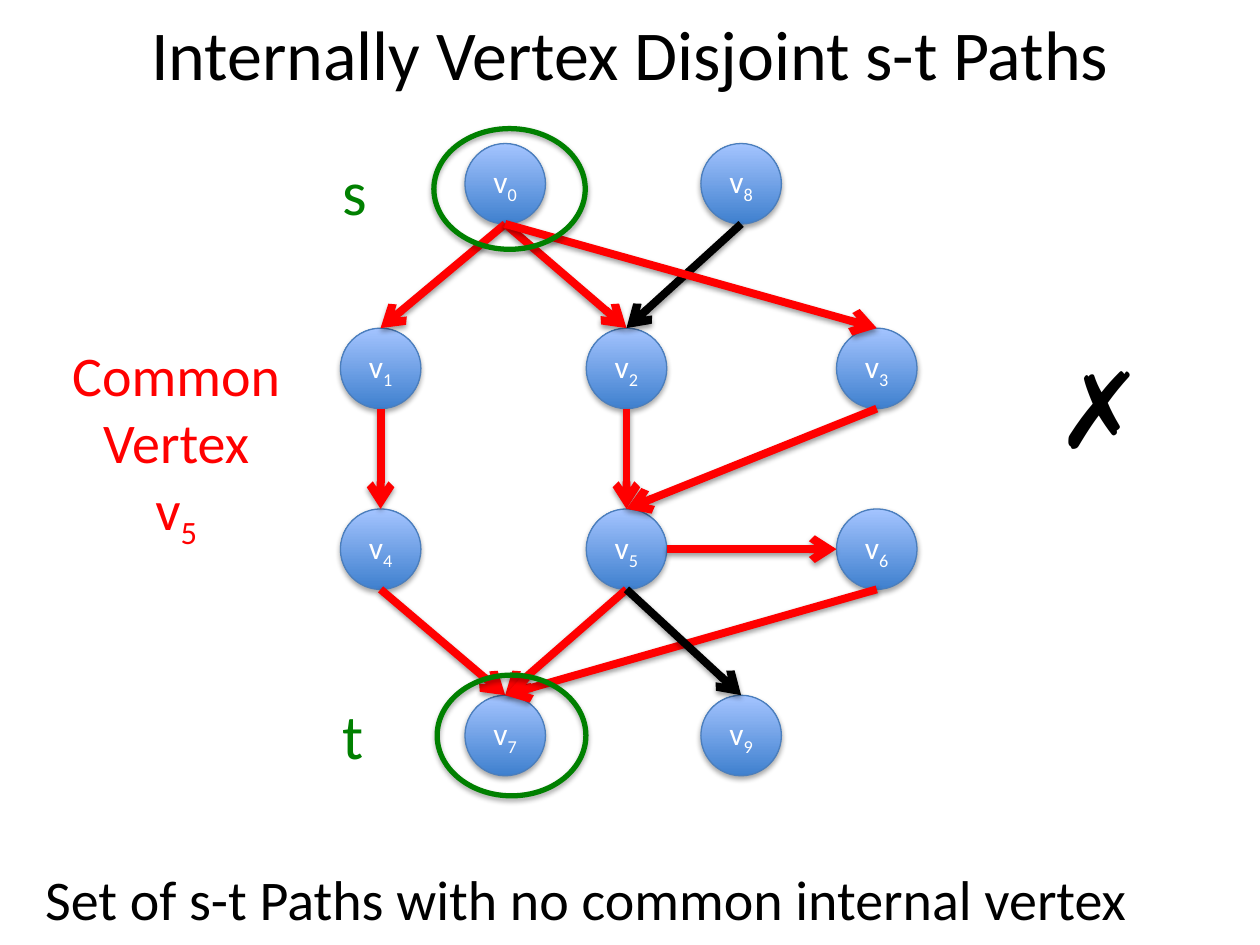
from lxml.etree import SubElement
from pptx import Presentation
from pptx.dml.color import RGBColor
from pptx.enum.shapes import MSO_CONNECTOR, MSO_SHAPE
from pptx.enum.text import MSO_ANCHOR, MSO_AUTO_SIZE, PP_ALIGN
from pptx.oxml import parse_xml
from pptx.oxml.ns import nsdecls, qn
from pptx.util import Pt

RED, BLACK, GREEN, WHITE = "FF0000", "000000", "008000", "FFFFFF"
DIAMETER = 46
ROWS = (105, 210.5, 313.8, 420.3)
LEFT, MIDDLE, RIGHT = 217.5, 358, 501
INNER_LEFT, INNER_RIGHT = 288.7, 423.5
NODES = {
    "8": (INNER_RIGHT, ROWS[0]), "0": (INNER_LEFT, ROWS[0]),
    "1": (LEFT, ROWS[1]), "2": (MIDDLE, ROWS[1]), "3": (RIGHT, ROWS[1]),
    "4": (LEFT, ROWS[2]), "5": (MIDDLE, ROWS[2]), "6": (RIGHT, ROWS[2]),
    "9": (INNER_RIGHT, ROWS[3]), "7": (INNER_LEFT, ROWS[3]),
}
EDGES = [
    ("0", "1", RED), ("1", "4", RED), ("4", "7", RED), ("0", "2", RED),
    ("2", "5", RED), ("5", "7", RED), ("5", "6", RED), ("8", "2", BLACK),
    ("0", "3", RED), ("6", "7", RED), ("3", "5", RED), ("5", "9", BLACK),
]


def color(value):
    return RGBColor.from_string(value)


def write(frame, text, size=32, fill=BLACK, font="Calibri", align=PP_ALIGN.LEFT):
    for index, line in enumerate(text.split("\n")):
        para = frame.paragraphs[0] if index == 0 else frame.add_paragraph()
        para.alignment = align
        base, _, subscript = line.partition("_")
        for part, lowered in ((base, False), (subscript, True)):
            if not part:
                continue
            span = para.add_run()
            span.text = part
            span.font.size = Pt(size)
            span.font.name = font
            span.font.color.rgb = color(fill)
            if lowered:
                span.font._element.set("baseline", "-25000")


class GraphSlide:
    def __init__(self, slide):
        self.slide = slide
        self.shapes = slide.shapes

    def shadow(self, shape, distance, opacity):
        effects = parse_xml(
            f'<a:effectLst {nsdecls("a")}><a:outerShdw blurRad="{Pt(3.1)}" '
            f'dist="{Pt(distance)}" dir="5400000" rotWithShape="0"><a:srgbClr val="{BLACK}">'
            f'<a:alpha val="{opacity * 1000}"/></a:srgbClr></a:outerShdw></a:effectLst>'
        )
        shape._element.spPr.append(effects)

    def title(self, text, left, top, width, height):
        box = self.shapes.title
        box.left, box.top, box.width, box.height = map(Pt, (left, top, width, height))
        box.text_frame.vertical_anchor = MSO_ANCHOR.MIDDLE
        write(box.text_frame, text, size=40, align=PP_ALIGN.CENTER)

    def label(self, text, left, top, width, height, wrap=False, **style):
        box = self.shapes.add_textbox(*map(Pt, (left, top, width, height)))
        box.text_frame.word_wrap = wrap
        box.text_frame.auto_size = MSO_AUTO_SIZE.SHAPE_TO_FIT_TEXT
        write(box.text_frame, text, **style)

    def oval(self, center, width, height, line, weight):
        x, y = center
        oval = self.shapes.add_shape(
            MSO_SHAPE.OVAL, Pt(x - width / 2), Pt(y - height / 2), Pt(width), Pt(height)
        )
        oval.fill.background()
        oval.line.color.rgb = color(line)
        oval.line.width = Pt(weight)
        return oval

    def ring(self, center, width, height):
        self.shadow(self.oval(center, width, height, GREEN, 3), 1.8, 35)

    def node(self, name, center):
        node = self.oval(center, DIAMETER, DIAMETER, "4B7EBC", 0.75)
        node.fill.gradient()
        node.fill.gradient_angle = 90
        for stop, shade in zip(node.fill.gradient_stops, ("3F80CE", "A4C4FF")):
            stop.color.rgb = color(shade)
        self.shadow(node, 1.8, 35)
        node.text_frame.vertical_anchor = MSO_ANCHOR.MIDDLE
        write(node.text_frame, f"v_{name}", size=18, fill=WHITE, align=PP_ALIGN.CENTER)

    def edge(self, start, end, stroke):
        (x1, y1), (x2, y2) = start, end
        radius = DIAMETER / 2
        if y1 == y2:
            x1, x2 = x1 + radius, x2 - radius
        else:
            y1, y2 = y1 + radius, y2 - radius
        arrow = self.shapes.add_connector(MSO_CONNECTOR.STRAIGHT, *map(Pt, (x1, y1, x2, y2)))
        arrow.line.color.rgb = color(stroke)
        arrow.line.width = Pt(4.5)
        SubElement(arrow.line._get_or_add_ln(), qn("a:tailEnd"), type="arrow")
        self.shadow(arrow, 1.6, 38)


def main():
    deck = Presentation()
    deck.slide_width, deck.slide_height = Pt(720), Pt(540)
    page = GraphSlide(deck.slides.add_slide(deck.slide_layouts[5]))
    page.title("Internally Vertex Disjoint s-t Paths", 36, 4.3, 648, 51)
    page.label("Set of s-t Paths with no common internal vertex", 18.7, 490.3, 693.4, 46)
    for name, center in NODES.items():
        page.node(name, center)
    for start, end, stroke in EDGES:
        page.edge(NODES[start], NODES[end], stroke)
    page.ring((292.3, 420.3), 85, 69)
    page.label("t", 188.6, 394.6, 99.4, 51, wrap=True, size=36, fill=GREEN)
    page.ring((291.2, 108), 86.5, 69)
    page.label("s", 188.6, 83.5, 99.4, 51, wrap=True, size=36, fill=GREEN)
    page.label("✗", 596.9, 193, 49.7, 80, size=60, font="Arial")
    page.label("Common\nVertex\nv_5", 28, 190.8, 145.4, 123.8, fill=RED, align=PP_ALIGN.CENTER)
    deck.save("out.pptx")


if __name__ == "__main__":
    main()
